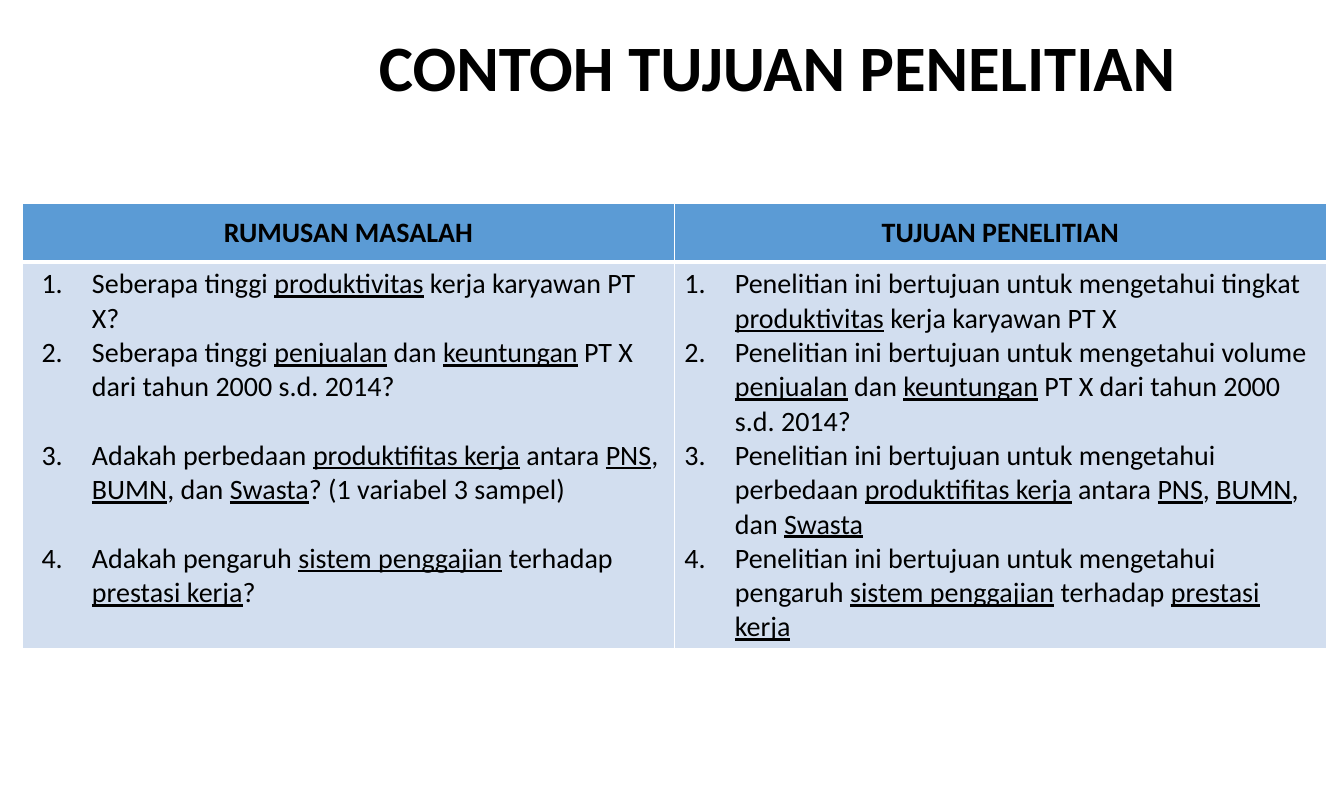
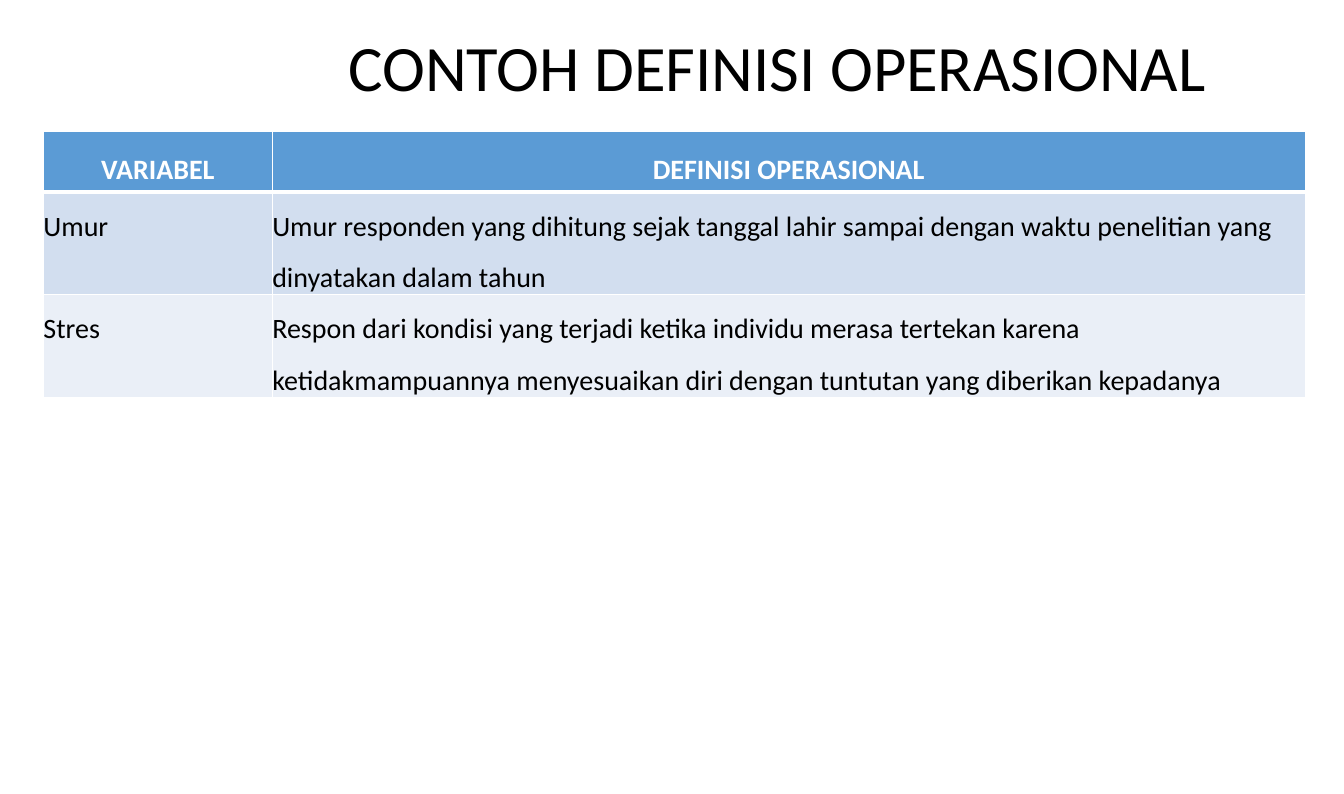
from pptx import Presentation
from pptx.dml.color import RGBColor
from pptx.enum.text import MSO_ANCHOR, PP_ALIGN
from pptx.oxml.ns import qn
from pptx.util import Pt
from lxml import etree

CENTER = PP_ALIGN.CENTER
LEFT = PP_ALIGN.LEFT
MIDDLE = MSO_ANCHOR.MIDDLE
TOP = MSO_ANCHOR.TOP

FONT = "Calibri"
BLACK = "000000"
WHITE = "FFFFFF"
HEADER_FILL = "5B9BD5"
BAND_FILLS = ["D2DEEF", "EAEFF7"]
TITLE_SIZE = 46.2
TEXT_SIZE = 20
BLANK_LINE = 24.4
HANGING = 36
THIN, THICK = 1, 3

GOALS_HEADER = ["RUMUSAN MASALAH", "TUJUAN PENELITIAN"]
PROBLEMS = [
    "Seberapa tinggi _produktivitas_ kerja karyawan PT X?",
    "Seberapa tinggi _penjualan_ dan _keuntungan_ PT X dari tahun 2000 s.d. 2014?",
    "Adakah perbedaan _produktifitas kerja_ antara _PNS_, _BUMN_, dan _Swasta_? (1 variabel 3 sampel)",
    "Adakah pengaruh _sistem penggajian_ terhadap _prestasi kerja_?",
]
GOALS = [
    "Penelitian ini bertujuan untuk mengetahui tingkat _produktivitas_ kerja karyawan PT X",
    "Penelitian ini bertujuan untuk mengetahui volume _penjualan_ dan _keuntungan_ PT X dari tahun 2000 s.d. 2014?",
    "Penelitian ini bertujuan untuk mengetahui perbedaan _produktifitas kerja_ antara _PNS_, _BUMN_, dan _Swasta_",
    "Penelitian ini bertujuan untuk mengetahui pengaruh _sistem penggajian_ terhadap _prestasi kerja_",
]
DEFINITIONS_HEADER = ["VARIABEL", "DEFINISI OPERASIONAL"]
DEFINITIONS = [
    ["Umur", "Umur responden yang dihitung sejak tanggal lahir sampai dengan waktu "
             "penelitian yang dinyatakan dalam tahun"],
    ["Stres", "Respon dari kondisi yang terjadi ketika individu merasa tertekan karena "
              "ketidakmampuannya menyesuaikan diri dengan tuntutan yang diberikan kepadanya"],
]


def rgb(color):
    return RGBColor.from_string(color)


def write(p, text, size=TEXT_SIZE, color=BLACK, bold=False, align=LEFT, spacing=1.0):
    p.alignment = align
    p.line_spacing = spacing
    for i, part in enumerate(text.split("_")):
        if not part:
            continue
        r = p.add_run()
        r.text = part
        r.font.name = FONT
        r.font.size = Pt(size)
        r.font.bold = bold
        r.font.underline = i % 2 == 1
        r.font.color.rgb = rgb(color)


def number(p, indent):
    pPr = p._p.get_or_add_pPr()
    pPr.set("marL", str(Pt(indent)))
    pPr.set("indent", str(-Pt(HANGING)))
    etree.SubElement(pPr, qn("a:buAutoNum"), type="arabicPeriod")


def write_list(cell, items, indent, spaced=()):
    tf = cell.text_frame
    for i, item in enumerate(items):
        p = tf.add_paragraph() if i else tf.paragraphs[0]
        number(p, indent)
        write(p, item)
        if i in spaced:
            p.space_before = Pt(BLANK_LINE)


def add_title(slide, text, bold):
    sp = slide.shapes.add_textbox(Pt(178), Pt(16), Pt(754.5), Pt(69))
    tf = sp.text_frame
    tf.word_wrap = True
    tf.vertical_anchor = MIDDLE
    write(tf.paragraphs[0], text, TITLE_SIZE, bold=bold, align=CENTER, spacing=0.9)


def style_cell(cell, row):
    widths = {
        "a:lnL": THIN,
        "a:lnR": THIN,
        "a:lnT": THICK if row == 1 else THIN,
        "a:lnB": THICK if row == 0 else THIN,
    }
    tcPr = cell._tc.get_or_add_tcPr()
    for tag, width in widths.items():
        ln = etree.SubElement(tcPr, qn(tag), w=str(Pt(width)))
        fill = etree.SubElement(ln, qn("a:solidFill"))
        etree.SubElement(fill, qn("a:srgbClr"), val=WHITE)
    cell.fill.solid()
    cell.fill.fore_color.rgb = rgb(BAND_FILLS[(row - 1) % 2] if row else HEADER_FILL)
    cell.vertical_anchor = TOP if row else MIDDLE


def add_grid(slide, left, top, widths, heights):
    frame = slide.shapes.add_table(len(heights), len(widths), Pt(left), Pt(top),
                                   Pt(sum(widths)), Pt(sum(heights)))
    table = frame.table
    table.first_row = False
    table.horz_banding = False
    for column, width in zip(table.columns, widths):
        column.width = Pt(width)
    for i, (row, height) in enumerate(zip(table.rows, heights)):
        row.height = Pt(height)
        for cell in row.cells:
            style_cell(cell, i)
    return table


def write_header(table, labels, color, spacing=1.0):
    for cell, label in zip(table.rows[0].cells, labels):
        write(cell.text_frame.paragraphs[0], label, color=color, bold=True,
              align=CENTER, spacing=spacing)


def add_goals_slide(prs):
    s = prs.slides.add_slide(prs.slide_layouts[6])
    add_title(s, "CONTOH TUJUAN PENELITIAN", True)
    table = add_grid(s, 16, 145.5, [465.75, 465.75], [41.75, 276])
    write_header(table, GOALS_HEADER, BLACK)
    write_list(table.cell(1, 0), PROBLEMS, 42.5, spaced=(2, 3))
    write_list(table.cell(1, 1), GOALS, HANGING)


def add_definitions_slide(prs):
    s = prs.slides.add_slide(prs.slide_layouts[6])
    add_title(s, "CONTOH DEFINISI OPERASIONAL", False)
    table = add_grid(s, 31, 93.5, [163.5, 738], [43.75, 73.25, 73.25])
    write_header(table, DEFINITIONS_HEADER, WHITE, 1.5)
    for i, texts in enumerate(DEFINITIONS, 1):
        for cell, text in zip(table.rows[i].cells, texts):
            cell.margin_left = cell.margin_right = Pt(0)
            cell.margin_top = cell.margin_bottom = Pt(0)
            write(cell.text_frame.paragraphs[0], text, spacing=1.5)


def main():
    prs = Presentation()
    prs.slide_width = Pt(960)
    prs.slide_height = Pt(567)
    add_goals_slide(prs)
    add_definitions_slide(prs)
    prs.save("out.pptx")


if __name__ == "__main__":
    main()
